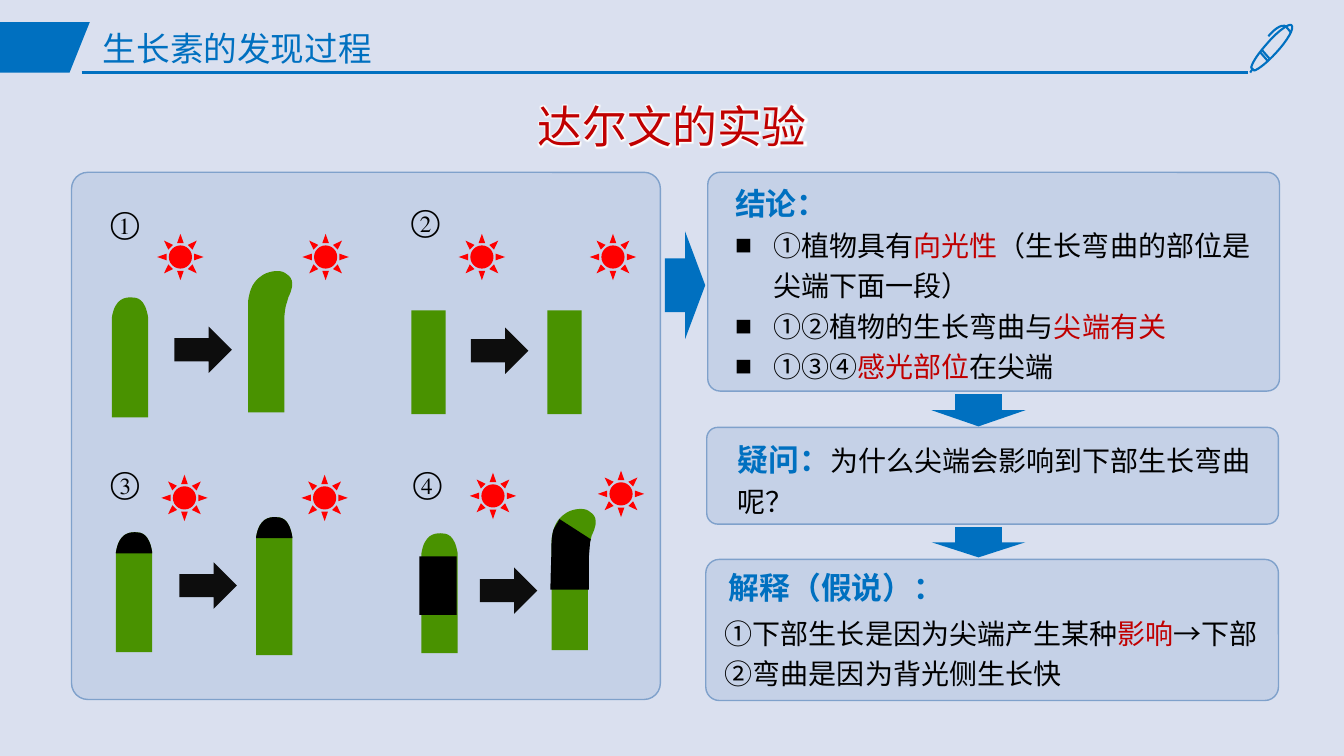
from lxml import etree
from pptx import Presentation
from pptx.dml.color import RGBColor
from pptx.enum.shapes import MSO_CONNECTOR, MSO_SHAPE
from pptx.enum.text import MSO_ANCHOR, MSO_AUTO_SIZE, PP_ALIGN
from pptx.oxml.ns import qn
from pptx.util import Inches, Pt

RECT, ROUND = MSO_SHAPE.RECTANGLE, MSO_SHAPE.ROUNDED_RECTANGLE
SUN, RIGHT, DOWN = MSO_SHAPE.SUN, MSO_SHAPE.RIGHT_ARROW, MSO_SHAPE.DOWN_ARROW
LEFT, MID = PP_ALIGN.LEFT, PP_ALIGN.CENTER
TOP, CENTRE = MSO_ANCHOR.TOP, MSO_ANCHOR.MIDDLE

COLOURS = {"page": "DAE0EF", "blue": "0070C0", "panel": "4F81BD", "edge": "7FA1CB",
           "red": "C00000", "sun": "FF0000", "stem": "499200", "ink": "000000",
           "arrow": "0D0D0D", "white": "FFFFFF"}
SANS, SERIF = "Arial", "Times New Roman"

# Content: each paragraph is a list of runs (text, size, colour, font, bold)
HEAD = [[("生长素的发现过程", 24, "blue", SERIF, False)]]
TOPIC = [[("达尔文的实验", 32, "red", SERIF, False)]]
RESULT = [
    [("结论：", 22, "blue", SANS, True)],
    [("①植物具有", 20, "ink", SANS, False), ("向光性", 20, "red", SANS, False),
     ("（生长弯曲的部位是尖端下面一段）", 20, "ink", SANS, False)],
    [("①②植物的生长弯曲与", 20, "ink", SERIF, False), ("尖端有关", 20, "red", SERIF, False)],
    [("①③④", 20, "ink", SERIF, False), ("感光部位", 20, "red", SERIF, False),
     ("在尖端", 20, "ink", SERIF, False)],
]
DOUBT = [[("疑问：", 22, "blue", SANS, True),
          ("为什么尖端会影响到下部生长弯曲呢？", 20, "ink", SERIF, False)]]
GUESS = [[("解释（假说）：", 22, "blue", SANS, True)]]
REASON = [
    [("①下部生长是因为尖端产生某种", 20, "ink", SERIF, False),
     ("影响", 20, "red", SERIF, False), ("→下部", 20, "ink", SERIF, False)],
    [("②弯曲是因为背光侧生长快", 20, "ink", SERIF, False)],
]

# Places: left, top, width, height
PANELS = [((0.71, 1.71, 5.84, 5.23), 0.031), ((7.02, 1.71, 5.67, 2.17), 0.056),
          ((7.01, 4.24, 5.67, 0.96), 0.113), ((7, 5.55, 5.68, 1.4), 0.096)]
FLOW = [((9.24, 3.91, 0.93, 0.32), 0), ((9.24, 5.23, 0.93, 0.3), 0),
        ((6.26, 2.63, 1.07, 0.4), 270)]
LABELS = [("①", 1, 1.97), ("②", 3.98, 1.95), ("③", 1, 4.55), ("④", 4, 4.55)]
SUNS = [(1.56, 2.32), (3, 2.32), (4.55, 2.32), (5.85, 2.32),
        (1.6, 4.71), (2.99, 4.71), (4.66, 4.69), (5.93, 4.67)]
STEPS = [(1.73, 3.24), (4.67, 3.25), (1.78, 5.58), (4.76, 5.63)]
DOMES = [(1.11, 2.95, 1.19, "stem"), (1.15, 5.28, 1.19, "stem"), (4.18, 5.29, 1.19, "stem"),
         (2.54, 5.13, 1.37, "stem"), (1.15, 5.28, 0.21, "ink"), (2.54, 5.13, 0.21, "ink")]
BENT = [(2.46, 2.67), (5.47, 5.03)]
BLOCKS = [(4.08, 3.08, 0.34, 1.03, "stem"), (5.43, 3.08, 0.34, 1.03, "stem"),
          (4.16, 5.52, 0.37, 0.58, "ink")]

# Outlines: two numbers are a corner, six are a Bézier curve
BEND = [(0, 1.42), (0, 0.32), (0.02, 0.18, 0.06, 0.12, 0.13, 0.07),
        (0.19, 0.02, 0.32, 0, 0.37, 0.04), (0.42, 0.07, 0.48, 0.12, 0.4, 0.28),
        (0.38, 0.36, 0.37, 0.35, 0.36, 0.48), (0.36, 1.42)]
SLEEVE = [(0.38, 0.7), (0, 0.7), (0, 0.55, 0.01, 0.4, 0.01, 0.25),
          (0.02, 0.07, 0.04, 0.1, 0.09, 0), (0.4, 0.2),
          (0.39, 0.26, 0.4, 0.15, 0.38, 0.39), (0.38, 0.7)]
FLAG = [(0, 0), (0.89, 0), (0.69, 0.5), (0, 0.5)]
PEN = [([(0.17, 0.38), (0.1, 0.3)], False), ([(0.12, 0.28), (0.19, 0.36)], False),
       ([(0.41, 0.03), (0.39, 0.01, 0.28, 0.08, 0.17, 0.21),
         (0.08, 0.31, 0.02, 0.4, 0.01, 0.45), (0.04, 0.48),
         (0.08, 0.47, 0.17, 0.4, 0.26, 0.3), (0.37, 0.18, 0.44, 0.06, 0.41, 0.03)], True),
       ([(0.02, 0.47), (0, 0.5)], False),
       ([(0.4, 0.1), (0.4, 0.1, 0.38, 0.07, 0.35, 0.04),
         (0.35, 0.04, 0.3, 0, 0.18, 0.14)], False)]

deck = Presentation()
deck.slide_width, deck.slide_height = Inches(13.33), Inches(7.5)
slide = deck.slides.add_slide(deck.slide_layouts[1])
shapes = slide.shapes


def place(shape, box):
    """Position a placeholder and bring it to the front."""
    shape.left, shape.top, shape.width, shape.height = map(Inches, box)
    shapes._spTree.append(shape._element)


def tint(name):
    return RGBColor.from_string(COLOURS[name])


def paint(shape, fill=None, edge=None, size=1):
    shape.shadow.inherit = False
    if fill:
        shape.fill.solid()
        shape.fill.fore_color.rgb = tint(fill)
    else:
        shape.fill.background()
    if edge:
        shape.line.color.rgb = tint(edge)
        shape.line.width = Pt(size)
    else:
        shape.line.fill.background()
    return shape


def block(kind, box, fill, edge=None):
    return paint(shapes.add_shape(kind, *map(Inches, box)), fill, edge)


def trace(strokes, x, y):
    """Draw strokes as one freeform, then join control points into curves."""
    form, parts = None, []
    for path, closed in strokes:
        dots = [(Inches(x + part[i]), Inches(y + part[i + 1]))
                for part in path for i in range(0, len(part), 2)]
        if form is None:
            form = shapes.build_freeform(*dots[0])
        else:
            form.move_to(*dots[0])
        form.add_line_segments(dots[1:], close=closed)
        parts += path[1:]
    shape = form.convert_to_shape()
    lines = iter(list(shape._element.iter(qn("a:lnTo"))))
    for part in parts:
        group = [next(lines) for _ in range(len(part) // 2)]
        if len(group) == 3:
            curve = etree.Element(qn("a:cubicBezTo"))
            group[0].addprevious(curve)
            for line in group:
                curve.append(line[0])
                line.getparent().remove(line)
    return shape


def dome(high):
    return [(0, high), (0, 0.2), (0.03, 0.01, 0.13, 0, 0.19, 0),
            (0.25, 0, 0.33, 0.01, 0.36, 0.2), (0.36, high)]


def write(shape, paras, space=1.0, align=LEFT, anchor=TOP, wrap=True):
    frame = shape.text_frame
    frame.word_wrap, frame.auto_size = wrap, MSO_AUTO_SIZE.NONE
    frame.vertical_anchor = anchor
    for i, runs in enumerate(paras):
        para = frame.add_paragraph() if i else frame.paragraphs[0]
        para.alignment, para.line_spacing = align, space
        para.space_before = Pt(0)
        for text, size, shade, face, bold in runs:
            run = para.add_run()
            run.text = text
            font = run.font
            font.size, font.name, font.bold = Pt(size), face, bold
            font.color.rgb = tint(shade)
    return frame


def label(box, paras, **look):
    return write(shapes.add_textbox(*map(Inches, box)), paras, **look)


# Page and header
block(RECT, (0, 0, 13.33, 7.5), "page")
paint(trace([(FLAG, True)], 0, 0.22), "blue")
rule = shapes.add_connector(MSO_CONNECTOR.STRAIGHT, *map(Inches, (0.81, 0.72, 12.38, 0.72)))
rule.line.color.rgb, rule.line.width = tint("blue"), Pt(1.5)
etree.SubElement(rule._element.spPr, qn("a:effectLst"))
paint(trace(PEN, 12.4, 0.22), None, "blue", 1.5)
place(shapes.title, (0.92, 0.21, 11.5, 0.59))
write(shapes.title, HEAD, space=0.9, anchor=CENTRE)

# Panels and the arrows between them
for box, bow in PANELS:
    panel = block(ROUND, box, "panel", "edge")
    panel.adjustments[0] = bow
    shade = panel._element.spPr.find(qn("a:solidFill"))[0]
    etree.SubElement(shade, qn("a:alpha"), val="15000")
for box, turn in FLOW:
    block(DOWN, box, "blue").rotation = turn

# Topic with a white glow
topic = label((5.14, 0.93, 3.06, 0.64), TOPIC, align=MID)
ink = topic.paragraphs[0].runs[0].font._element.find(qn("a:solidFill"))
halo = etree.Element(qn("a:effectLst"))
glow = etree.SubElement(halo, qn("a:glow"), rad="63500")
etree.SubElement(glow, qn("a:srgbClr"), val=COLOURS["white"])
ink.addnext(halo)

# Experiments
for x, y, high, shade in DOMES:
    paint(trace([(dome(high), True)], x, y), shade)
for x, y in BENT:
    paint(trace([(BEND, True)], x, y), "stem")
paint(trace([(SLEEVE, True)], 5.46, 5.15), "ink")
for *box, shade in BLOCKS:
    block(RECT, box, shade)
for x, y in SUNS:
    block(SUN, (x, y, 0.46, 0.46), "sun")
for x, y in STEPS:
    block(RIGHT, (x, y, 0.57, 0.46), "arrow")
for mark, x, y in LABELS:
    label((x, y, 0.46, 0.47), [[(mark, 22, "ink", SERIF, False)]])

# Findings
body = slide.placeholders[1]
place(body, (7.19, 1.71, 5.44, 2.13))
for i, para in enumerate(write(body, RESULT, space=1.2).paragraphs):
    props = para._p.get_or_add_pPr()
    dent = Inches(0.38) if i else 0
    props.set("marL", str(dent))
    props.set("indent", str(-dent))
    if i:
        etree.SubElement(props, qn("a:buFont"), typeface=SANS)
        etree.SubElement(props, qn("a:buChar"), char="■")
    else:
        etree.SubElement(props, qn("a:buNone"))
label((7.22, 4.25, 5.44, 0.92), DOUBT, space=1.2)
label((7.13, 5.59, 2.36, 0.47), GUESS, wrap=False)
label((7.09, 6, 5.59, 0.88), REASON, space=1.2)

deck.save("out.pptx")
